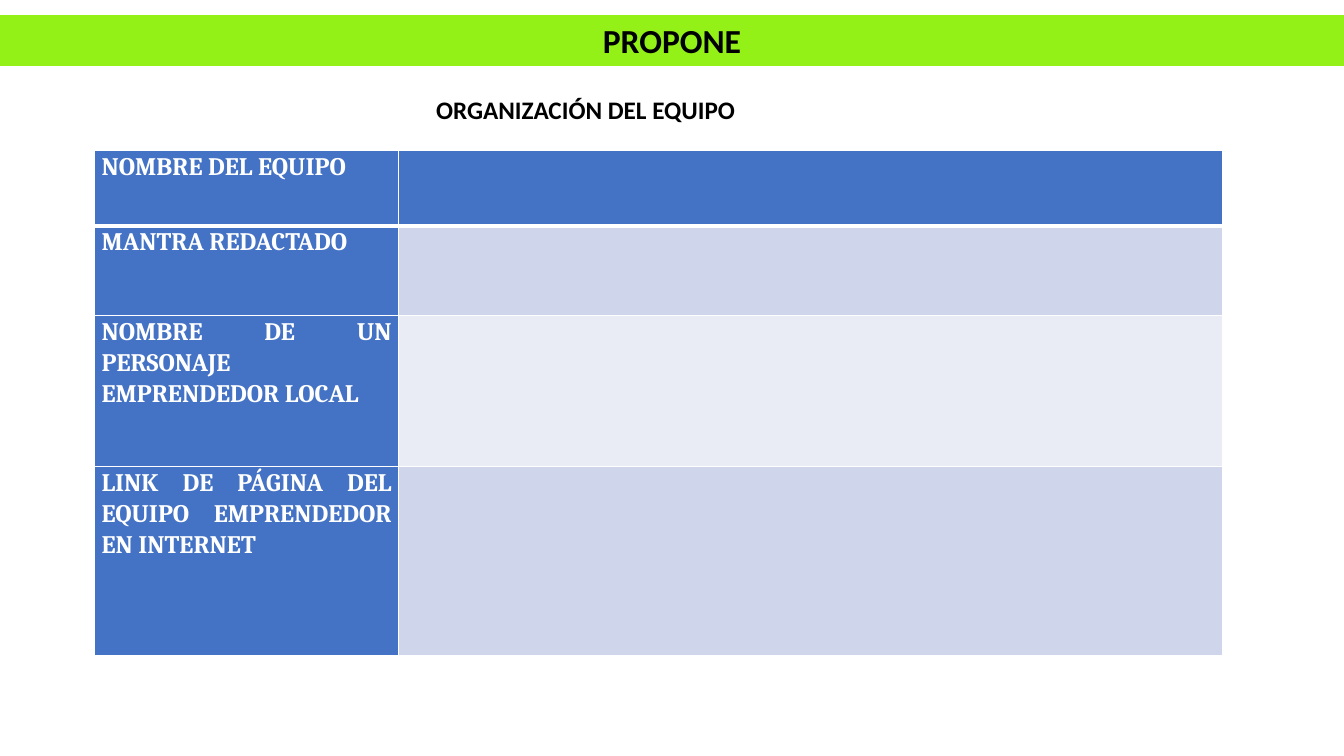
from lxml.etree import SubElement
from pptx import Presentation
from pptx.dml.color import RGBColor
from pptx.enum.text import MSO_ANCHOR, MSO_AUTO_SIZE, PP_ALIGN
from pptx.oxml.ns import qn
from pptx.util import Cm, Pt

COLORS = {"green": "93F118", "blue": "4472C4", "band": "CFD5EA",
          "light": "E9EBF5", "white": "FFFFFF", "black": "000000"}


def add_run(p, text, font, size, color):
    r = p.add_run()
    r.text = text
    r.font.name = font
    r.font.size = Pt(size)
    r.font.bold = True
    r.font.color.rgb = RGBColor.from_string(COLORS[color])


def set_borders(cell, bottom):
    tcPr = cell._tc.get_or_add_tcPr()
    for side, width in (("L", 1), ("R", 1), ("T", 1), ("B", bottom)):
        ln = SubElement(tcPr, qn(f"a:ln{side}"), w=str(Pt(width)))
        fill = SubElement(ln, qn("a:solidFill"))
        SubElement(fill, qn("a:srgbClr"), val=COLORS["white"])


prs = Presentation()
prs.slide_width, prs.slide_height = Cm(33.87), Cm(19.05)
s = prs.slides.add_slide(prs.slide_layouts[5])

# Title band
title = s.shapes.title
title.left, title.top, title.width, title.height = Cm(0), Cm(0.38), prs.slide_width, Cm(1.28)
title.fill.solid()
title.fill.fore_color.rgb = RGBColor.from_string(COLORS["green"])
tf = title.text_frame
tf.auto_size = MSO_AUTO_SIZE.NONE
tf.vertical_anchor = MSO_ANCHOR.MIDDLE
p = tf.paragraphs[0]
p.alignment = PP_ALIGN.CENTER
add_run(p, "PROPONE", "Calibri", 24, "black")

# Subtitle
sp = s.shapes.add_textbox(Cm(10.24), Cm(2.21), Cm(8.64), Cm(1.04))
tf = sp.text_frame
tf.word_wrap = False
p = tf.paragraphs[0]
p.line_spacing = 1.07
p.space_after = Pt(8)
p._p.get_or_add_pPr().set("marL", str(Cm(0.5)))
add_run(p, "ORGANIZACIÓN DEL EQUIPO", "Calibri", 18, "black")

# Team table: label, alignment, row height, colour of the answer cell
ROWS = [
    ("NOMBRE DEL EQUIPO", PP_ALIGN.LEFT, 1.9, "blue"),
    ("MANTRA REDACTADO", PP_ALIGN.LEFT, 2.25, "band"),
    ("NOMBRE DE UN PERSONAJE EMPRENDEDOR LOCAL", PP_ALIGN.JUSTIFY, 3.8, "light"),
    ("LINK DE PÁGINA DEL EQUIPO EMPRENDEDOR EN INTERNET", PP_ALIGN.JUSTIFY, 4.77, "band"),
]
COLS = (7.67, 20.75)
height = sum(row[2] for row in ROWS)
table = s.shapes.add_table(len(ROWS), len(COLS), Cm(2.38), Cm(3.8),
                           Cm(sum(COLS)), Cm(height)).table
for col, width in zip(table.columns, COLS):
    col.width = Cm(width)

for i, (label, align, row_height, answer_color) in enumerate(ROWS):
    table.rows[i].height = Cm(row_height)
    for cell, color in zip(table.rows[i].cells, ("blue", answer_color)):
        set_borders(cell, bottom=3 if i == 0 else 1)
        cell.fill.solid()
        cell.fill.fore_color.rgb = RGBColor.from_string(COLORS[color])
        cell.margin_left = cell.margin_right = Cm(0.18)
        cell.margin_top = cell.margin_bottom = Cm(0)
    p = table.cell(i, 0).text_frame.paragraphs[0]
    p.alignment = align
    p.line_spacing = 1.07
    add_run(p, label, "Cambria", 18, "white")

# The first row's lower rule is also the second row's upper rule
for cell in table.rows[1].cells:
    cell._tc.tcPr.find(qn("a:lnT")).set("w", str(Pt(3)))

prs.save("out.pptx")
